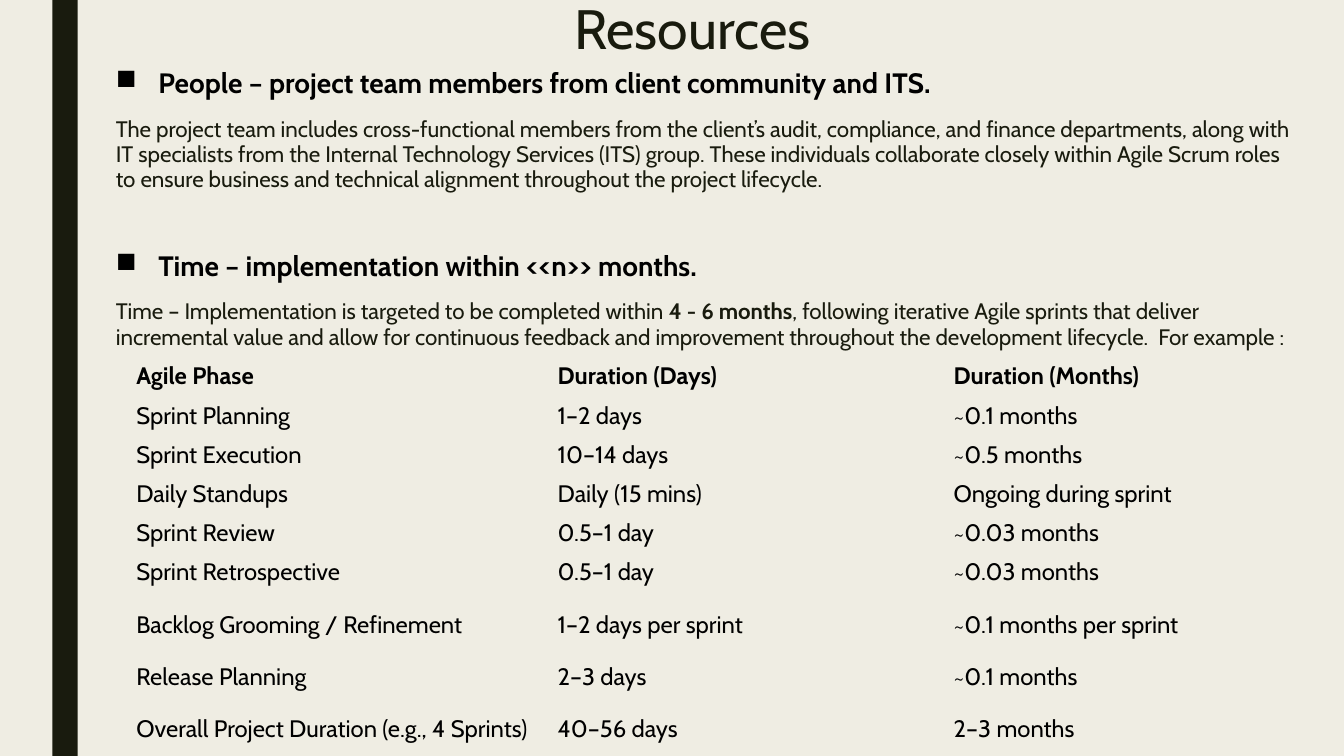
from lxml.etree import SubElement
from pptx import Presentation
from pptx.dml.color import RGBColor
from pptx.enum.shapes import MSO_SHAPE as Preset
from pptx.enum.text import MSO_ANCHOR as Anchor, MSO_AUTO_SIZE as AutoSize, PP_ALIGN as Align
from pptx.oxml.ns import qn
from pptx.util import Cm, Pt

FONT = "Cabin"
INK, BLACK, PAPER = "191B0E", "000000", "EFEDE3"
NO_GRID_STYLE = "{2D5ABB26-0587-4C30-8999-92F81FD0307C}"

PEOPLE_HEADING = "People – project team members from client community and ITS."
PEOPLE = (
    "The project team includes cross-functional members from the client’s audit, "
    "compliance, and finance departments, along with IT specialists from the Internal "
    "Technology Services (ITS) group. These individuals collaborate closely within Agile "
    "Scrum roles to ensure business and technical alignment throughout the project lifecycle."
)
TIME_HEADING = "Time – implementation within <<n>> months."
TIME_START = "Time – Implementation is targeted to be completed within "
TIME_SPAN = "4 - 6 months"
TIME_END = (
    ", following iterative Agile sprints that deliver incremental value and allow for "
    "continuous feedback and improvement throughout the development lifecycle.  For example :"
)

PHASES = [
    ("Agile Phase", "Duration (Days)", "Duration (Months)"),
    ("Sprint Planning", "1–2 days", "~0.1 months"),
    ("Sprint Execution", "10–14 days", "~0.5 months"),
    ("Daily Standups", "Daily (15 mins)", "Ongoing during sprint"),
    ("Sprint Review", "0.5–1 day", "~0.03 months"),
    ("Sprint Retrospective", "0.5–1 day", "~0.03 months"),
    ("Backlog Grooming / Refinement", "1–2 days per sprint", "~0.1 months per sprint"),
    ("Release Planning", "2–3 days", "~0.1 months"),
    ("Overall Project Duration (e.g., 4 Sprints)", "40–56 days", "2–3 months"),
]
COLUMN_WIDTHS = (10.62, 9.98, 9.98)
ROW_HEIGHT, TALL_ROW_HEIGHT = 0.94, 1.65
TALL_ROWS = (6, 8)


def rgb(color):
    return RGBColor.from_string(color)


def apply(target, **values):
    """Set each named attribute of target."""
    for name, value in values.items():
        setattr(target, name, value)


def add_run(paragraph, text, size, color, bold=False):
    run = paragraph.add_run()
    run.text = text
    apply(run.font, name=FONT, size=Pt(size), bold=bold)
    run.font.color.rgb = rgb(color)


def add_square_bullet(paragraph):
    properties = paragraph._p.get_or_add_pPr()
    indent = Cm(1.07)
    properties.set("marL", str(indent))
    properties.set("indent", str(-indent))
    SubElement(properties, qn("a:buChar"), char="■")


def add_side_bar(slide, height):
    bar = slide.shapes.add_shape(Preset.RECTANGLE, Cm(1.32), 0, Cm(0.64), height)
    bar.shadow.inherit = False
    bar.fill.solid()
    bar.fill.fore_color.rgb = rgb(INK)
    bar.line.fill.background()


def set_title(slide, text):
    title = slide.shapes.title
    apply(title, left=Cm(4.11), top=0, width=Cm(26.67), height=Cm(1.6))
    apply(title.text_frame, vertical_anchor=Anchor.MIDDLE, auto_size=AutoSize.NONE)
    paragraph = title.text_frame.paragraphs[0]
    apply(paragraph, alignment=Align.CENTER, line_spacing=0.89)
    add_run(paragraph, text, 39.6, INK)


def add_resources(slide):
    box = slide.shapes.add_textbox(Cm(2.67), Cm(1.6), Cm(30.43), Cm(17.45))
    frame = box.text_frame
    apply(frame, word_wrap=True, auto_size=AutoSize.NONE)

    def add_paragraph(space_before):
        paragraph = frame.add_paragraph() if frame.text else frame.paragraphs[0]
        apply(paragraph, line_spacing=0.94, space_before=Pt(space_before), space_after=Pt(2))
        return paragraph

    def add_section(heading, parts, space_before):
        """Add a bulleted heading and its text, given as (words, bold) parts."""
        head = add_paragraph(space_before)
        add_square_bullet(head)
        add_run(head, heading, 20, BLACK, bold=True)
        detail = add_paragraph(10)
        for words, bold in parts:
            add_run(detail, words, 16, INK, bold)

    add_section(PEOPLE_HEADING, [(PEOPLE, False)], 0)
    add_section(TIME_HEADING, [(TIME_START, False), (TIME_SPAN, True), (TIME_END, False)], 40)


def add_phase_table(slide):
    heights = [TALL_ROW_HEIGHT if i in TALL_ROWS else ROW_HEIGHT for i in range(len(PHASES))]
    table = slide.shapes.add_table(
        len(PHASES), len(COLUMN_WIDTHS), Cm(3.18), Cm(8.99),
        Cm(sum(COLUMN_WIDTHS)), Cm(sum(heights))).table
    table.horz_banding = False
    table._tbl.tblPr.find(qn("a:tableStyleId")).text = NO_GRID_STYLE
    for column, width in zip(table.columns, COLUMN_WIDTHS):
        column.width = Cm(width)
    for i, (row, height, phase) in enumerate(zip(table.rows, heights, PHASES)):
        row.height = Cm(height)
        for cell, text in zip(row.cells, phase):
            cell.fill.background()
            cell.vertical_anchor = Anchor.MIDDLE
            add_run(cell.text_frame.paragraphs[0], text, 17, BLACK, bold=i == 0)


def main():
    deck = Presentation()
    apply(deck, slide_width=Cm(33.87), slide_height=Cm(19.05))
    slide = deck.slides.add_slide(deck.slide_layouts.get_by_name("Title Only"))
    slide.background.fill.solid()
    slide.background.fill.fore_color.rgb = rgb(PAPER)
    add_side_bar(slide, deck.slide_height)
    set_title(slide, "Resources")
    add_resources(slide)
    add_phase_table(slide)
    deck.save("out.pptx")


if __name__ == "__main__":
    main()
